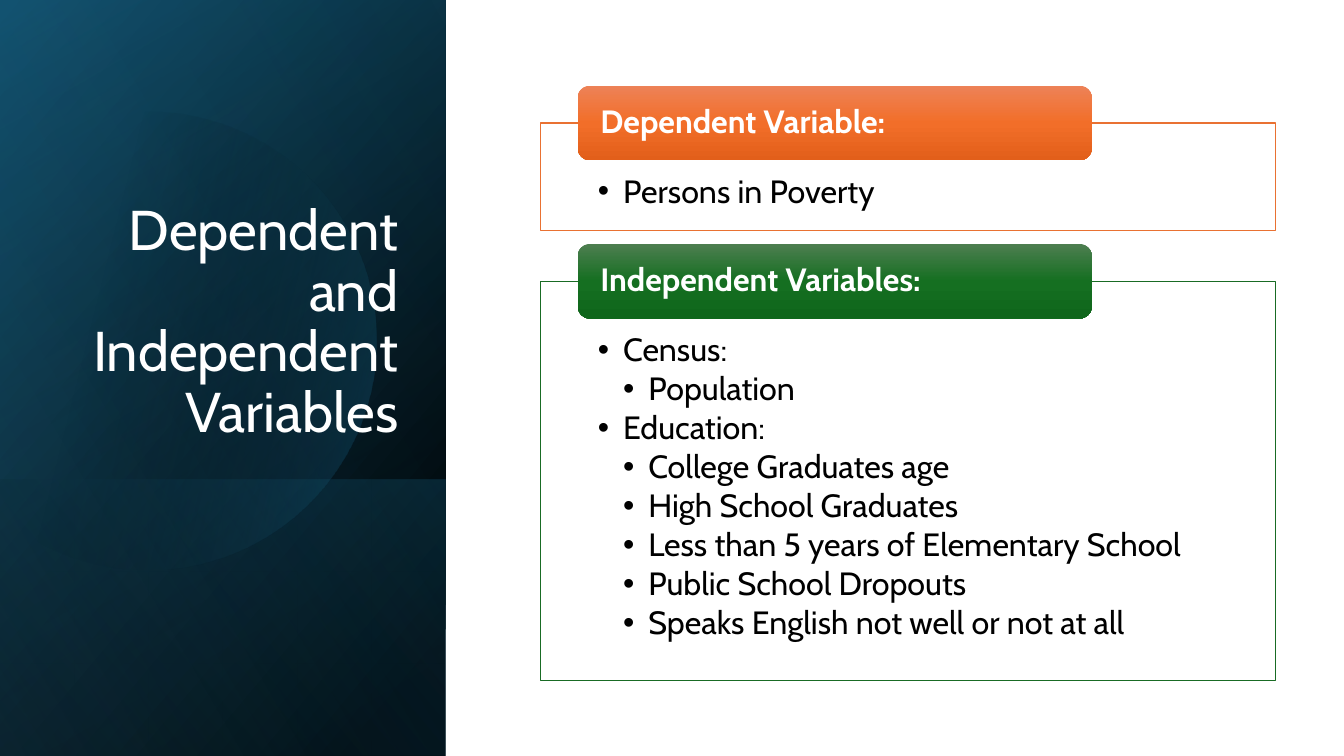
from math import cos, radians, sin

from lxml.etree import SubElement
from pptx import Presentation
from pptx.dml.color import RGBColor
from pptx.enum.shapes import MSO_SHAPE
from pptx.enum.text import MSO_ANCHOR, MSO_AUTO_SIZE, PP_ALIGN
from pptx.oxml import parse_xml
from pptx.oxml.ns import nsdecls, qn
from pptx.util import Inches, Pt

# Content
TITLE = "Dependent and Independent Variables"
CARDS = [  # heading, top, box height, line colour, gradient, (level, text) items
    ("Dependent Variable:", 0.85, 1.07, "orange", "warm",
     [(1, "Persons in Poverty")]),
    ("Independent Variables:", 2.42, 3.96, "green", "leaf",
     [(1, "Census:"), (2, "Population"), (1, "Education:"),
      (2, "College Graduates age"), (2, "High School Graduates"),
      (2, "Less than 5 years of Elementary School"),
      (2, "Public School Dropouts"),
      (2, "Speaks English not well or not at all")]),
]
FONT = "Cabin"
COLORS = {"white": "FFFFFF", "black": "000000", "navy": "104862",
          "teal": "156082", "sky": "46B1E1", "orange": "E97132",
          "green": "196B24", "warm1": "ED8257", "warm2": "F26E29",
          "warm3": "E25F1A", "leaf1": "4D7E50", "leaf2": "156F21",
          "leaf3": "0F661B"}

# Side panel layers: top, height, angle, stops of (position, colour, opacity)
WIDE, TALL = 4.42, 7.5
LAYERS = [
    (0, TALL, 50, [(8, "black", 100), (100, "navy", 100)]),
    (0, TALL, 30, [(0, "black", 0), (99, "teal", 46)]),
    (4.76, 2.74, 130, [(2, "teal", 29), (100, "black", 30)]),
]
GLOW = (0, TALL, 120, [(0, "black", 0), (99, "sky", 11)])

deck = Presentation()
deck.slide_width, deck.slide_height = Inches(13.33), Inches(7.5)
slide = deck.slides.add_slide(deck.slide_layouts[5])
shapes = slide.shapes


def rgb(name):
    return RGBColor.from_string(COLORS[name])


def shade(shape, stops, angle):
    """Give a shape a linear gradient and no line."""
    marks = "".join(
        f'<a:gs pos="{pos * 1000}"><a:srgbClr val="{COLORS[name]}">'
        f'<a:alpha val="{alpha * 1000}"/></a:srgbClr></a:gs>'
        for pos, name, alpha in stops)
    shape.shadow.inherit = False
    shape.line.fill.background()
    shape.fill.background()
    props = shape.element.spPr
    props.replace(props.find(qn("a:noFill")), parse_xml(
        f'<a:gradFill {nsdecls("a")} rotWithShape="1"><a:gsLst>{marks}</a:gsLst>'
        f'<a:lin ang="{angle * 60000}" scaled="0"/></a:gradFill>'))


def layer(top, high, angle, stops):
    """Add one panel layer, turned a quarter and mirrored."""
    left = (WIDE - high) / 2
    mid = top + high / 2
    rect = shapes.add_shape(MSO_SHAPE.RECTANGLE, Inches(left),
                            Inches(mid - WIDE / 2), Inches(high), Inches(WIDE))
    rect.rotation = 90
    rect.element.spPr.xfrm.set("flipH", "1")
    shade(rect, stops, angle)


def write(shape, items, size=23, color="black", bold=False, align=PP_ALIGN.LEFT,
          anchor=MSO_ANCHOR.TOP, inset=(0.1, 0.05, 0.1, 0.05), after=0):
    """Fill a shape with (level, text) items; level 0 has no bullet."""
    frame = shape.text_frame
    frame.word_wrap = True
    frame.auto_size = MSO_AUTO_SIZE.NONE
    frame.vertical_anchor = anchor
    (frame.margin_left, frame.margin_top,
     frame.margin_right, frame.margin_bottom) = map(Inches, inset)
    for i, (level, text) in enumerate(items):
        para = frame.paragraphs[0] if i == 0 else frame.add_paragraph()
        para.alignment = align
        para.line_spacing = 0.9
        para.space_before, para.space_after = Pt(0), Pt(after)
        run = para.add_run()
        run.text = text
        font = run.font
        font.name, font.size, font.bold = FONT, Pt(size), bold
        font.color.rgb = rgb(color)
        if level:
            para.level = level
            props = para._p.get_or_add_pPr()
            props.set("marL", str(Inches(0.25 * level)))
            props.set("indent", str(Inches(-0.25)))
            SubElement(props, qn("a:buFont")).set("typeface", "Arial")
            SubElement(props, qn("a:buChar")).set("char", "•")


# Side panel with a round glow cut off at the slide edge
for part in LAYERS:
    layer(*part)
cx, cy, radius = 1.46, 3.38, 2.27
arc = [(Inches(cx + radius * cos(radians(a))), Inches(cy + radius * sin(radians(a))))
       for a in range(-130, 131, 2)]
pen = shapes.build_freeform(*arc[0])
pen.add_line_segments(arc[1:], close=True)
shade(pen.convert_to_shape(), [(29, "black", 0), (100, "teal", 43)], 14)
layer(*GLOW)

# Title, brought in front of the panel
title = shapes.title
title.left, title.top = Inches(0.64), Inches(1.84)
title.width, title.height = Inches(3.41), Inches(2.62)
write(title, [(0, TITLE)], size=40, color="white", align=PP_ALIGN.RIGHT,
      anchor=MSO_ANCHOR.BOTTOM)
title.element.getparent().append(title.element)

# Cards: an outlined list with a heading over its top edge
LEFT, HEAD = 5.36, 0.74
for head, top, high, edge, tone, items in CARDS:
    box = shapes.add_shape(MSO_SHAPE.RECTANGLE, Inches(LEFT),
                           Inches(top + HEAD / 2), Inches(7.29), Inches(high))
    box.shadow.inherit = False
    box.fill.solid()
    box.fill.fore_color.rgb = rgb("white")
    box.line.color.rgb = rgb(edge)
    box.line.width = Pt(1)
    write(box, items, inset=(0.57, 0.52, 0.57, 0.18), after=3)

    tab = shapes.add_shape(MSO_SHAPE.ROUNDED_RECTANGLE, Inches(LEFT + 0.37),
                           Inches(top), Inches(5.1), Inches(HEAD))
    shade(tab, [(50 * i, f"{tone}{i + 1}", 100) for i in range(3)], 90)
    write(tab, [(0, head)], color="white", bold=True,
          anchor=MSO_ANCHOR.MIDDLE, inset=(0.19, 0, 0.19, 0))

deck.save("out.pptx")
